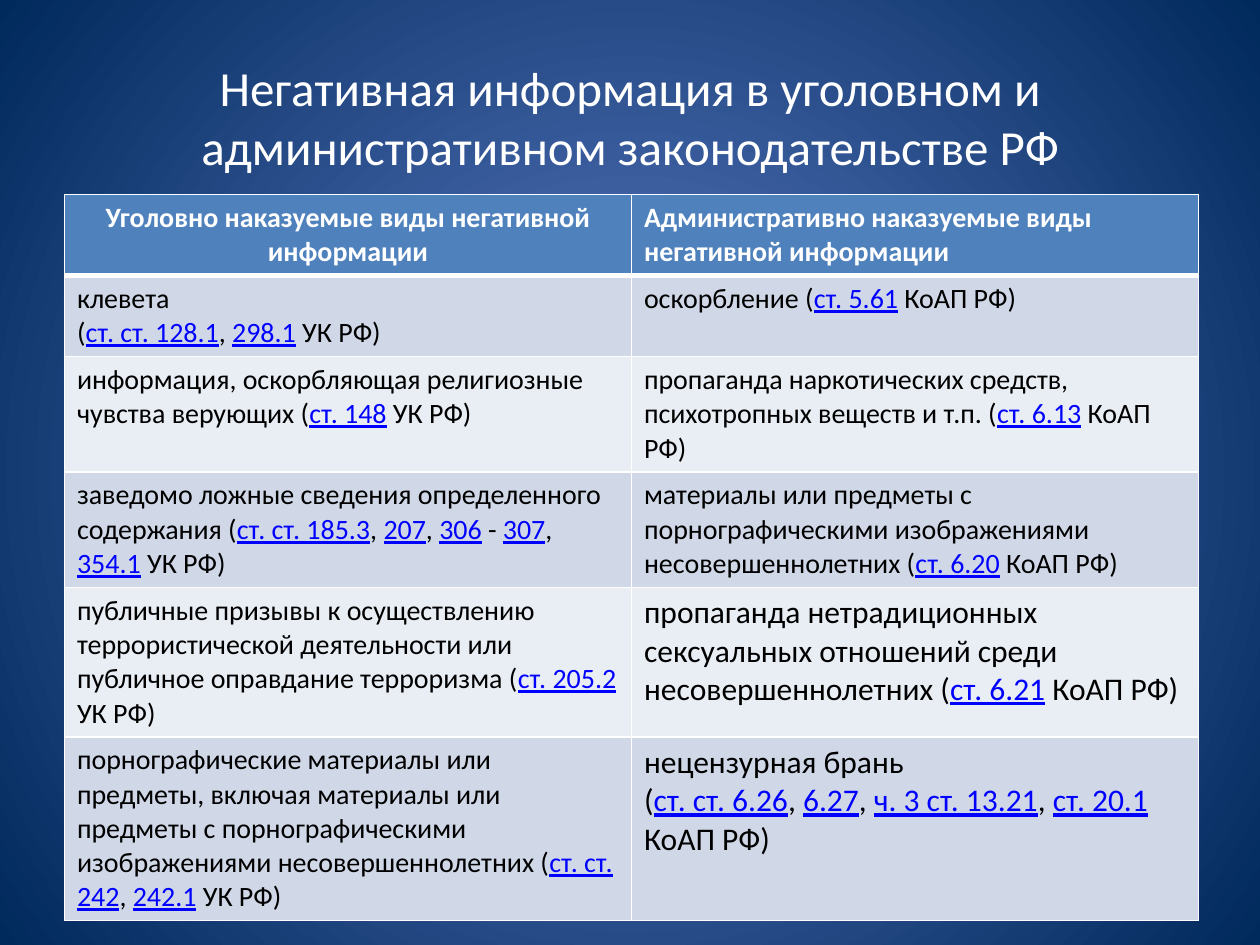
import pptx
import pptx.dml.color
import pptx.enum.text
import pptx.oxml
import pptx.oxml.ns
import pptx.util

Cm = pptx.util.Cm
Pt = pptx.util.Pt
ALIGN = pptx.enum.text.PP_ALIGN
ANCHOR = pptx.enum.text.MSO_ANCHOR
NAMESPACE = pptx.oxml.ns.nsdecls("a")

TITLE = "Негативная информация в уголовном и\vадминистративном законодательстве РФ"
HEADINGS = [
    "Уголовно наказуемые виды негативной информации",
    "Административно наказуемые виды негативной информации",
]
# Square brackets mark references to articles of law.
OFFENCES = [
    ("клевета\n([ст. ст. 128.1], [298.1] УК РФ)",
     "оскорбление ([ст. 5.61] КоАП РФ)"),
    ("информация, оскорбляющая религиозные чувства верующих ([ст. 148] УК РФ)",
     "пропаганда наркотических средств, психотропных веществ и т.п. "
     "([ст. 6.13] КоАП РФ)"),
    ("заведомо ложные сведения определенного содержания "
     "([ст. ст. 185.3], [207], [306] - [307], [354.1] УК РФ)",
     "материалы или предметы с порнографическими изображениями "
     "несовершеннолетних ([ст. 6.20] КоАП РФ)"),
    ("публичные призывы к осуществлению террористической деятельности или "
     "публичное оправдание терроризма ([ст. 205.2] УК РФ)",
     "пропаганда нетрадиционных сексуальных отношений среди "
     "несовершеннолетних ([ст. 6.21] КоАП РФ)"),
    ("порнографические материалы или предметы, включая материалы или предметы "
     "с порнографическими изображениями несовершеннолетних "
     "([ст. ст. 242], [242.1] УК РФ)",
     "нецензурная брань\n([ст. ст. 6.26], [6.27], [ч. 3 ст. 13.21], "
     "[ст. 20.1] КоАП РФ)"),
]
ROW_HEIGHTS = [1.63, 1.63, 2.32, 2.32, 3.01, 3.7]
LARGE_TEXT_FROM_ROW = 4


def colour(value):
    return pptx.dml.color.RGBColor.from_string(value)


def write(frame, text, font="Calibri", size=16, ink="000000", link="0000FF",
          bold=False, align=ALIGN.LEFT):
    """Fill a frame: newline starts a paragraph, \\v breaks a line, [..] is a reference."""
    frame.word_wrap = True
    for number, line in enumerate(text.split("\n")):
        para = frame.add_paragraph() if number else frame.paragraphs[0]
        para.alignment = align
        for position, part in enumerate(line.replace("]", "[").split("[")):
            is_link = position % 2 == 1
            for piece_number, piece in enumerate(part.split("\v")):
                if piece_number:
                    para.add_line_break()
                span = para.add_run()
                span.text = piece
                span.font.name = font
                span.font.size = Pt(size)
                span.font.bold = bold
                span.font.underline = is_link
                span.font.color.rgb = colour(link if is_link else ink)


class Page:
    white = "FFFFFF"
    header_fill = "4F81BD"
    band_fills = ["D0D8E8", "E9EDF4"]

    def __init__(self, deck):
        self.slide = deck.slides.add_slide(deck.slide_layouts[5])

    def radial_background(self, centre, edge):
        fill = self.slide.background.fill
        fill.gradient()
        for stop, value in zip(fill.gradient_stops, (centre, edge)):
            stop.color.rgb = colour(value)
        linear = next(self.slide.element.iter(pptx.oxml.ns.qn("a:lin")))
        linear.getparent().replace(linear, pptx.oxml.parse_xml(
            f'<a:path {NAMESPACE} path="circle">'
            '<a:fillToRect l="50000" t="50000" r="50000" b="50000"/></a:path>'))

    def title(self, text, left, top, width, height):
        box = self.slide.shapes.title
        box.left, box.top, box.width, box.height = map(Cm, (left, top, width, height))
        box.text_frame.vertical_anchor = ANCHOR.MIDDLE
        write(box.text_frame, text, size=28, ink=self.white, align=ALIGN.CENTER)

    def cell_style(self, cell, fill, bottom=1):
        cell.fill.solid()
        cell.fill.fore_color.rgb = colour(fill)
        properties = cell._tc.get_or_add_tcPr()
        for index, side in enumerate("LRTB"):
            width = Pt(bottom if side == "B" else 1)
            properties.insert(index, pptx.oxml.parse_xml(
                f'<a:ln{side} {NAMESPACE} w="{width}"><a:solidFill>'
                f'<a:srgbClr val="{self.white}"/></a:solidFill></a:ln{side}>'))

    def table(self, headings, rows, heights, left, top, width):
        frame = self.slide.shapes.add_table(
            len(rows) + 1, len(headings), Cm(left), Cm(top), Cm(width), Cm(sum(heights)))
        grid = frame.table
        for row, height in zip(grid.rows, heights):
            row.height = Cm(height)
        for column, heading in enumerate(headings):
            cell = grid.cell(0, column)
            self.cell_style(cell, self.header_fill, bottom=3)
            write(cell.text_frame, heading, ink=self.white, bold=True,
                  align=ALIGN.LEFT if column else ALIGN.CENTER)
        for number, row in enumerate(rows, start=1):
            for column, text in enumerate(row):
                cell = grid.cell(number, column)
                self.cell_style(cell, self.band_fills[(number - 1) % 2])
                large = column == 1 and number >= LARGE_TEXT_FROM_ROW
                write(cell.text_frame, text, size=18 if large else 16)


def main():
    deck = pptx.Presentation()
    deck.slide_width, deck.slide_height = Cm(25.4), Cm(19.05)
    page = Page(deck)
    page.radial_background("5E7CC5", "00295C")
    page.title(TITLE, 1.27, 0.76, 22.86, 3.18)
    page.table(HEADINGS, OFFENCES, ROW_HEIGHTS, 1.3, 3.92, 22.86)
    deck.save("out.pptx")


if __name__ == "__main__":
    main()
